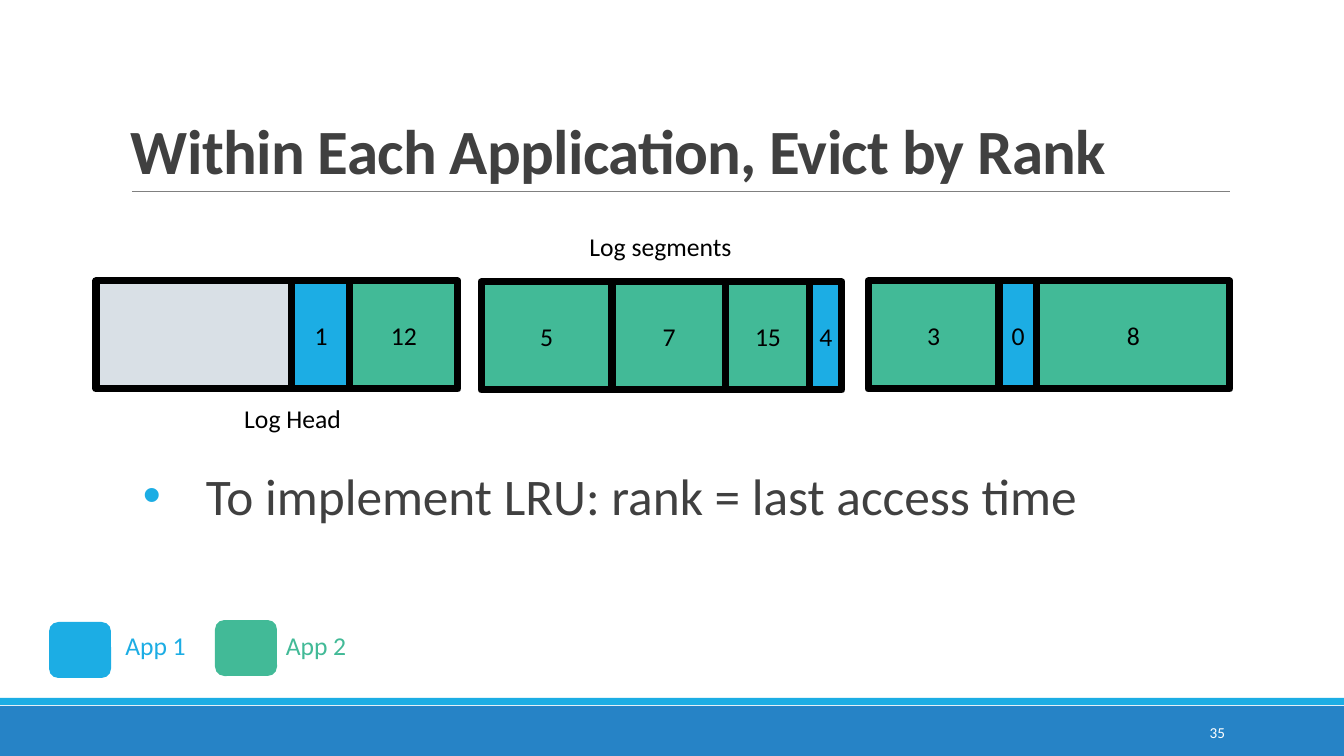
from dataclasses import dataclass

from lxml import etree
from pptx import Presentation
from pptx import util as u
from pptx.dml.color import RGBColor
from pptx.enum import shapes, text
from pptx.oxml import ns

SCALE = 914400 / 84
FONT = "Calibri"
BLUE, GREEN, GRAY = "1CADE4", "42BA97", "D9E0E6"
BLACK, WHITE, DARK = "000000", "FFFFFF", "404040"
LEFT, MID, RIGHT = text.PP_ALIGN.LEFT, text.PP_ALIGN.CENTER, text.PP_ALIGN.RIGHT
TOP, CENTER, BASE = (text.MSO_ANCHOR.TOP, text.MSO_ANCHOR.MIDDLE,
                     text.MSO_ANCHOR.BOTTOM)
RECT, ROUND = shapes.MSO_SHAPE.RECTANGLE, shapes.MSO_SHAPE.ROUNDED_RECTANGLE


@dataclass
class Cell:
    width: int
    color: str
    rank: str = ""


@dataclass
class Segment:
    left: int
    top: int
    cells: list[Cell]


@dataclass
class Label:
    box: tuple[int, int, int, int]
    words: str
    size: int = 22
    color: str = BLACK
    align: text.PP_ALIGN = MID
    anchor: text.MSO_ANCHOR = CENTER


@dataclass
class Block:
    box: tuple[int, int, int, int]
    color: str
    kind: shapes.MSO_SHAPE = RECT


SEGMENTS = [
    Segment(96, 281, [Cell(196, GRAY), Cell(58, BLUE, "1"), Cell(108, GREEN, "12")]),
    Segment(481, 282, [Cell(131, GREEN, "5"), Cell(114, GREEN, "7"),
                       Cell(84, GREEN, "15"), Cell(32, BLUE, "4")]),
    Segment(868, 281, [Cell(131, GREEN, "3"), Cell(38, BLUE, "0"),
                       Cell(193, GREEN, "8")]),
]
BLOCKS = [
    Block((0, 706, 1344, 50), "2683C6"),
    Block((0, 698, 1344, 7), BLUE),
    Block((49, 622, 62, 56), BLUE, ROUND),
    Block((215, 620, 62, 56), GREEN, ROUND),
]
LABELS = [
    Label((1091, 712, 144, 40), "35", 13, WHITE, RIGHT),
    Label((28, 603, 255, 85), "App 1", color=BLUE),
    Label((208, 603, 216, 85), "App 2", color=GREEN),
    Label((93, 226, 1135, 39), "Log segments", anchor=TOP),
    Label((89, 398, 407, 39), "Log Head", anchor=TOP),
]


def px(n: int) -> u.Emu:
    return u.Emu(round(n * SCALE))


def rgb(code: str) -> RGBColor:
    return RGBColor.from_string(code)


def write(shape, label: Label, side: int = 10, edge: int = 5) -> None:
    frame = shape.text_frame
    frame.text = label.words
    frame.word_wrap = True
    frame.auto_size = text.MSO_AUTO_SIZE.NONE
    frame.vertical_anchor = label.anchor
    frame.margin_left = frame.margin_right = px(side)
    frame.margin_top = frame.margin_bottom = px(edge)
    line = frame.paragraphs[0]
    line.alignment = label.align
    font = line.runs[0].font
    font.name, font.size = FONT, u.Pt(label.size)
    font.color.rgb = rgb(label.color)


def add_label(slide, label: Label, side: int = 10):
    shape = slide.shapes.add_textbox(*map(px, label.box))
    write(shape, label, side)
    return shape


def add_block(slide, block: Block):
    shape = slide.shapes.add_shape(block.kind, *map(px, block.box))
    shape.shadow.inherit = False
    shape.fill.solid()
    shape.fill.fore_color.rgb = rgb(block.color)
    shape.line.fill.background()
    return shape


def add_segment(slide, part: Segment) -> None:
    left = part.left
    for cell in part.cells:
        box = (left, part.top, cell.width, 108)
        shape = add_block(slide, Block(box, cell.color))
        shape.line.color.rgb = rgb(BLACK)
        shape.line.width = u.Pt(6)
        if cell.rank:
            write(shape, Label(box, cell.rank), 0)
        left += cell.width


def add_title(slide) -> None:
    title = slide.shapes.title
    box = (121, 32, 1109, 160)
    title.left, title.top, title.width, title.height = map(px, box)
    write(title, Label(box, "Within Each Application, Evict by Rank", 54,
                       DARK, LEFT, BASE))
    line = title.text_frame.paragraphs[0]
    line.line_spacing = 0.85
    font = line.runs[0].font
    font.bold = True
    font._element.set("spc", "-60")
    rule = slide.shapes.add_connector(
        shapes.MSO_CONNECTOR.STRAIGHT, *map(px, (132, 191, 1230, 191)))
    rule.line.color.rgb = rgb("808080")
    rule.line.width = u.Pt(0.5)
    etree.SubElement(rule._element.spPr, ns.qn("a:effectLst"))


def add_point(slide) -> None:
    label = Label((121, 459, 1109, 133), "To implement LRU: rank = last access time",
                  44, DARK, LEFT, TOP)
    line = add_label(slide, label, 0).text_frame.paragraphs[0]
    line.space_before, line.space_after = u.Pt(2.4), u.Pt(4.8)
    props = line._p.get_or_add_pPr()
    props.set("marL", str(px(85)))
    props.set("indent", str(px(-63)))
    tint = etree.SubElement(props, ns.qn("a:buClr"))
    etree.SubElement(tint, ns.qn("a:srgbClr"), val=BLUE)
    etree.SubElement(props, ns.qn("a:buFont"), typeface="Arial")
    etree.SubElement(props, ns.qn("a:buChar"), char="•")


def main() -> None:
    deck = Presentation()
    deck.slide_width, deck.slide_height = px(1344), px(756)
    slide = deck.slides.add_slide(deck.slide_layouts[5])
    for block in BLOCKS:
        add_block(slide, block)
    add_title(slide)
    for part in SEGMENTS:
        add_segment(slide, part)
    for label in LABELS:
        add_label(slide, label)
    add_point(slide)
    deck.save("out.pptx")


if __name__ == "__main__":
    main()
